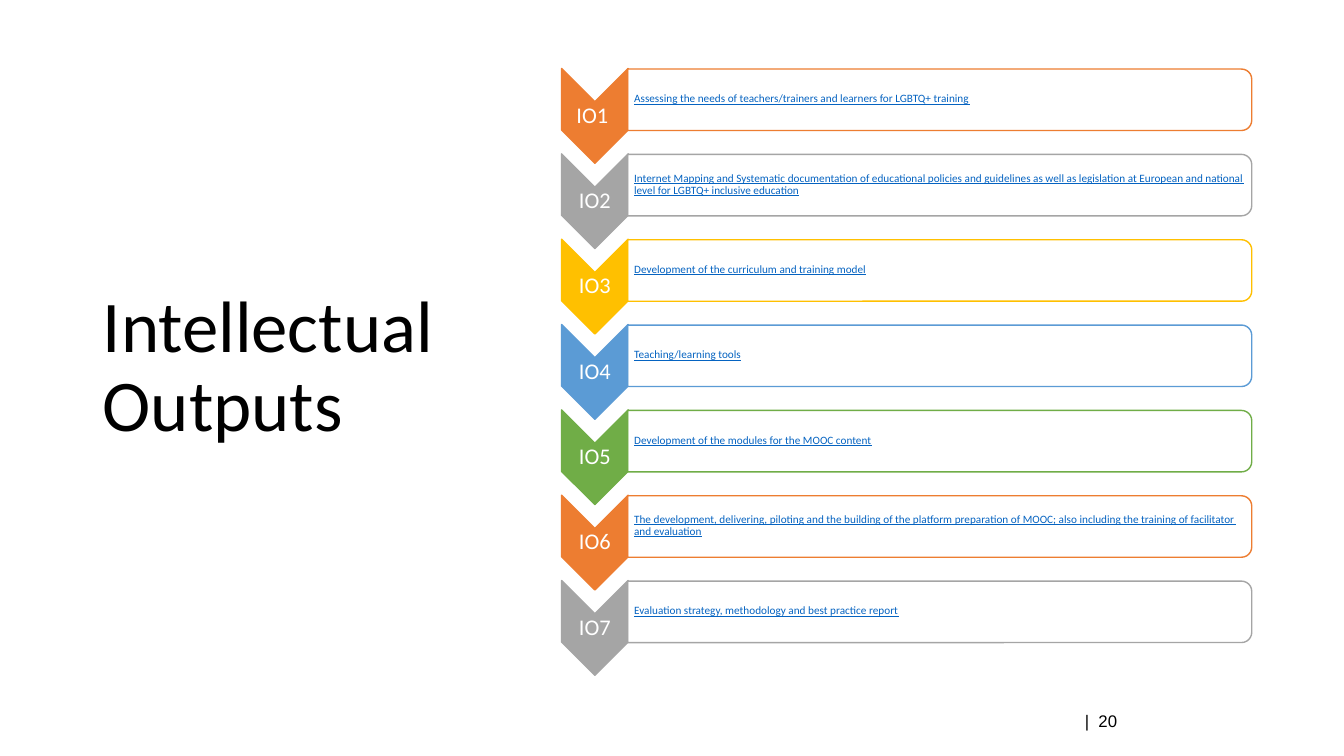
"""Build the Intellectual Outputs slide with its chevron list."""
from lxml.etree import SubElement
from pptx import Presentation
from pptx.dml.color import RGBColor
from pptx.enum.shapes import MSO_SHAPE as Shape
from pptx.enum.text import MSO_ANCHOR as Anchor, MSO_AUTO_SIZE as AutoSize, PP_ALIGN as Align
from pptx.oxml.ns import qn
from pptx.util import Inches, Pt

BLACK = RGBColor(0x00, 0x00, 0x00)
WHITE = RGBColor(0xFF, 0xFF, 0xFF)
LINK = RGBColor(0x05, 0x63, 0xC1)
ORANGE = RGBColor(0xED, 0x7D, 0x31)
GRAY = RGBColor(0xA5, 0xA5, 0xA5)
GOLD = RGBColor(0xFF, 0xC0, 0x00)
BLUE = RGBColor(0x5B, 0x9B, 0xD5)
GREEN = RGBColor(0x70, 0xAD, 0x47)

OUTPUTS = [
    ("IO1 ", ORANGE, "Assessing the needs of teachers/trainers and learners for LGBTQ+ training"),
    ("IO2", GRAY, "Internet Mapping and Systematic documentation of educational policies and guidelines "
                  "as well as legislation at European and national level for LGBTQ+ inclusive education"),
    ("IO3", GOLD, "Development of the curriculum and training model"),
    ("IO4", BLUE, "Teaching/learning tools"),
    ("IO5", GREEN, "Development of the modules for the MOOC content"),
    ("IO6", ORANGE, "The development, delivering, piloting and the building of the platform preparation "
                    "of MOOC; also including the training of facilitator and evaluation"),
    ("IO7", GRAY, "Evaluation strategy, methodology and best practice report"),
]
FIRST_CENTER = 1.15
LAST_CENTER = 6.23
PITCH = (LAST_CENTER - FIRST_CENTER) / (len(OUTPUTS) - 1)


class OutputsSlide:
    """Hold the slide and its style, and add each kind of element."""

    def __init__(self, deck, font="Calibri"):
        self.slide = deck.slides.add_slide(deck.slide_layouts[5])
        self.font = font

    def set_text(self, frame, text, size, color, align=Align.LEFT, font=None, spacing=0.9):
        frame.word_wrap = True
        frame.auto_size = AutoSize.NONE
        frame.vertical_anchor = Anchor.MIDDLE
        frame.text = text
        paragraph = frame.paragraphs[0]
        paragraph.alignment = align
        paragraph.line_spacing = spacing
        paragraph.font.name = font or self.font
        paragraph.font.size = Pt(size)
        paragraph.font.color.rgb = color
        return paragraph

    def title(self, text, left, top, width, height):
        title = self.slide.shapes.title
        title.left, title.top = Inches(left), Inches(top)
        title.width, title.height = Inches(width), Inches(height)
        self.set_text(title.text_frame, text, 52, BLACK)

    def text(self, left, top, width, height, inset_left=0.1, inset=0.01):
        box = self.slide.shapes.add_textbox(Inches(left), Inches(top), Inches(width), Inches(height))
        frame = box.text_frame
        frame.margin_left = Inches(inset_left)
        frame.margin_right = frame.margin_top = frame.margin_bottom = Inches(inset)
        return frame

    def turned(self, preset, center_x, center_y, width, height, fill, line):
        shape = self.slide.shapes.add_shape(
            preset, Inches(center_x - width / 2), Inches(center_y - height / 2), Inches(width), Inches(height))
        shape.rotation = 90
        shape.shadow.inherit = False
        shape.fill.solid()
        shape.fill.fore_color.rgb = fill
        shape.line.color.rgb = line
        shape.line.width = Pt(1)
        return shape

    def bullet(self, frame, text):
        properties = frame.paragraphs[0]._p.get_or_add_pPr()
        properties.set("marL", str(Inches(0.06)))
        properties.set("indent", str(-Inches(0.06)))
        SubElement(properties, qn("a:buChar")).set("char", "•")
        self.set_text(frame, text, 8, LINK).font.underline = True

    def output(self, center, label, color, description):
        self.turned(Shape.CHEVRON, 5.9, center, 0.94, 0.66, color, color)
        label_frame = self.text(5.57, center - 0.14, 0.66, 0.28, inset_left=0.01)
        self.set_text(label_frame, label, 16, WHITE, Align.CENTER)
        panel = self.turned(Shape.ROUND_2_SAME_RECTANGLE, 9.32, center - 0.16, 0.61, 6.19, WHITE, color)
        panel_fill = panel._element.spPr.find(qn("a:solidFill"))[0]
        SubElement(panel_fill, qn("a:alpha")).set("val", "90000")
        self.bullet(self.text(6.23, center - 0.44, 6.16, 0.55, inset_left=0.06), description)


def main():
    deck = Presentation()
    deck.slide_width, deck.slide_height = Inches(13.33), Inches(7.5)
    page = OutputsSlide(deck)
    page.title("Intellectual Outputs", 0.92, 0.61, 3.69, 6.09)
    page_number = page.text(9.42, 6.95, 3, 0.4, inset=0.1)
    page.set_text(page_number, "|  20", 12, BLACK, Align.CENTER, "Arial", 1.0).space_after = Pt(6)
    for row, (label, color, description) in enumerate(OUTPUTS):
        page.output(FIRST_CENTER + row * PITCH, label, color, description)
    deck.save("out.pptx")


if __name__ == "__main__":
    main()
